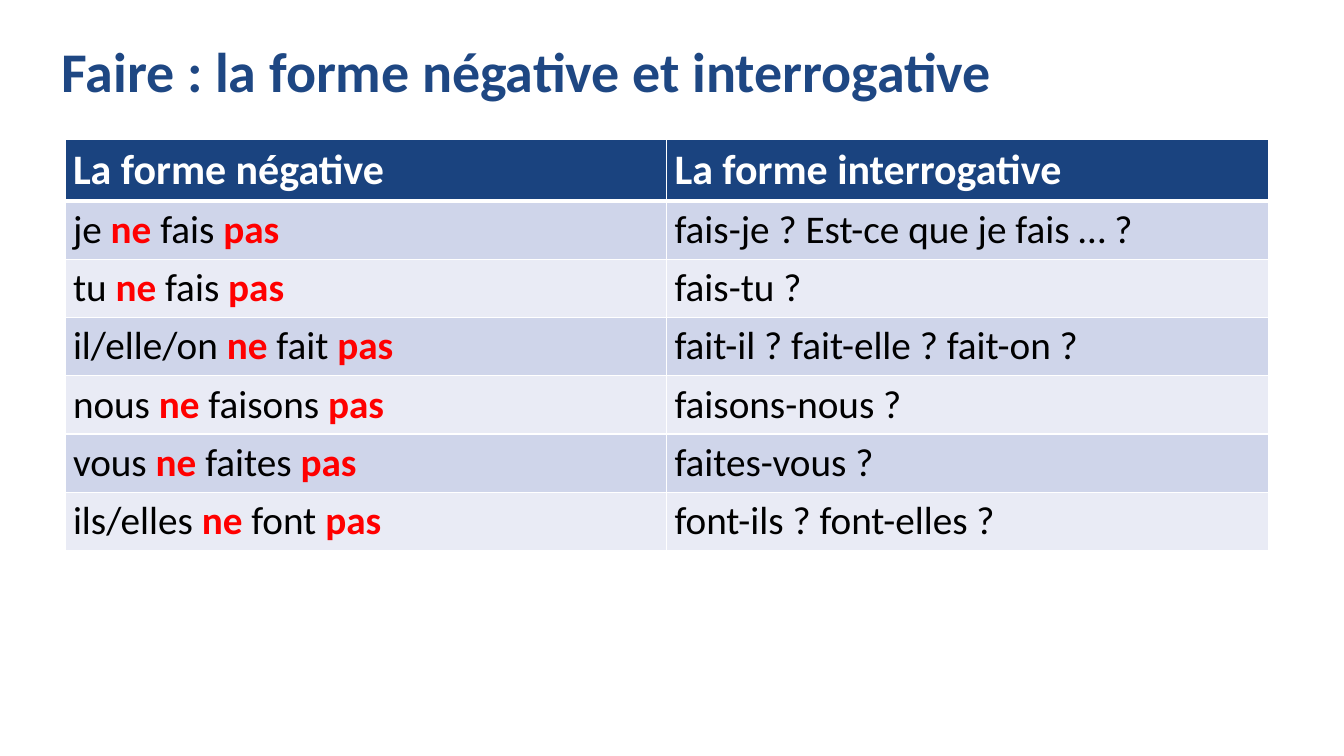
from dataclasses import dataclass

from lxml.etree import SubElement
from pptx import Presentation
from pptx.dml.color import RGBColor as RGB
from pptx.enum.text import MSO_ANCHOR as Anchor, MSO_AUTO_SIZE as AutoSize, PP_ALIGN as Align
from pptx.oxml.ns import qn
from pptx.util import Cm, Pt

# Content
TITLE = "Faire : la forme négative et interrogative"
HEADERS = ("La forme négative", "La forme interrogative")
# subject, verb, question form
CONJUGATION = [
    ("je", "fais", "fais-je ? Est-ce que je fais … ?"),
    ("tu", "fais", "fais-tu ?"),
    ("il/elle/on", "fait", "fait-il ? fait-elle ? fait-on ?"),
    ("nous", "faisons", "faisons-nous ?"),
    ("vous", "faites", "faites-vous ?"),
    ("ils/elles", "font", "font-ils ? font-elles ?"),
]


@dataclass(frozen=True)
class Theme:
    font: str = "Calibri"
    title: str = "1E4783"
    header: str = "1A437F"
    bands: tuple = ("CFD5EA", "E9EBF5")
    white: str = "FFFFFF"
    text: str = "000000"
    negation: str = "FF0000"
    title_size: int = 40
    header_size: int = 30
    body_size: int = 28


T = Theme()
HEADER_H, ROW_H = Cm(1.54), Cm(1.46)
MARGINS = {"margin_left": Cm(0.2), "margin_right": Cm(0.2),
           "margin_top": Cm(0.13), "margin_bottom": Cm(0.13)}


def set_attrs(obj, values):
    for name, value in values.items():
        setattr(obj, name, value)


def add_run(p, text, size, color, bold=False):
    r = p.add_run()
    r.text = text
    set_attrs(r.font, {"name": T.font, "size": Pt(size), "bold": bold})
    r.font.color.rgb = RGB.from_string(color)


def add_borders(cell, bottom):
    tc_pr = cell._tc.get_or_add_tcPr()
    for side, width in (("L", 1), ("R", 1), ("T", 1), ("B", bottom)):
        ln = SubElement(tc_pr, qn(f"a:ln{side}"), w=str(Pt(width)))
        SubElement(SubElement(ln, qn("a:solidFill")), qn("a:srgbClr"), val=T.white)


def fill_cell(cell, runs, fill, bottom=1):
    set_attrs(cell, MARGINS)
    add_borders(cell, bottom)
    cell.fill.solid()
    cell.fill.fore_color.rgb = RGB.from_string(fill)
    for run in runs:
        add_run(cell.text_frame.paragraphs[0], *run)


prs = Presentation()
set_attrs(prs, {"slide_width": Cm(33.87), "slide_height": Cm(19.05)})
s = prs.slides.add_slide(prs.slide_layouts[5])

# Title
sp = s.shapes.title
set_attrs(sp, {"left": Cm(1.3), "top": Cm(1.02), "width": Cm(29.21), "height": Cm(1.73)})
tf = sp.text_frame
set_attrs(tf, {"word_wrap": True, "auto_size": AutoSize.NONE, "vertical_anchor": Anchor.MIDDLE})
p = tf.paragraphs[0]
set_attrs(p, {"alignment": Align.LEFT, "line_spacing": 0.9})
add_run(p, TITLE, T.title_size, T.title, True)

# Table
n_rows = len(CONJUGATION) + 1
table = s.shapes.add_table(n_rows, len(HEADERS), Cm(1.64), Cm(3.51), Cm(30.32),
                           HEADER_H + ROW_H * len(CONJUGATION)).table
table.horz_banding = False
for i, row in enumerate(table.rows):
    row.height = ROW_H if i else HEADER_H

# Header row
for col, header in enumerate(HEADERS):
    fill_cell(table.cell(0, col), [(header, T.header_size, T.white, True)], T.header, bottom=3)

# Conjugation rows
for i, (subject, verb, question) in enumerate(CONJUGATION):
    band = T.bands[i % 2]
    plain, strong = (T.body_size, T.text), (T.body_size, T.negation, True)
    negative = [(f"{subject} ", *plain), ("ne ", *strong), (f"{verb} ", *plain), ("pas", *strong)]
    # the first row keeps the thick line under the header
    fill_cell(table.cell(i + 1, 0), negative, band)
    fill_cell(table.cell(i + 1, 1), [(question, *plain)], band)

# Thick line shared by the header and the first row
for col in range(len(HEADERS)):
    table.cell(1, col)._tc.tcPr.find(qn("a:lnT")).set("w", str(Pt(3)))

prs.save("out.pptx")
